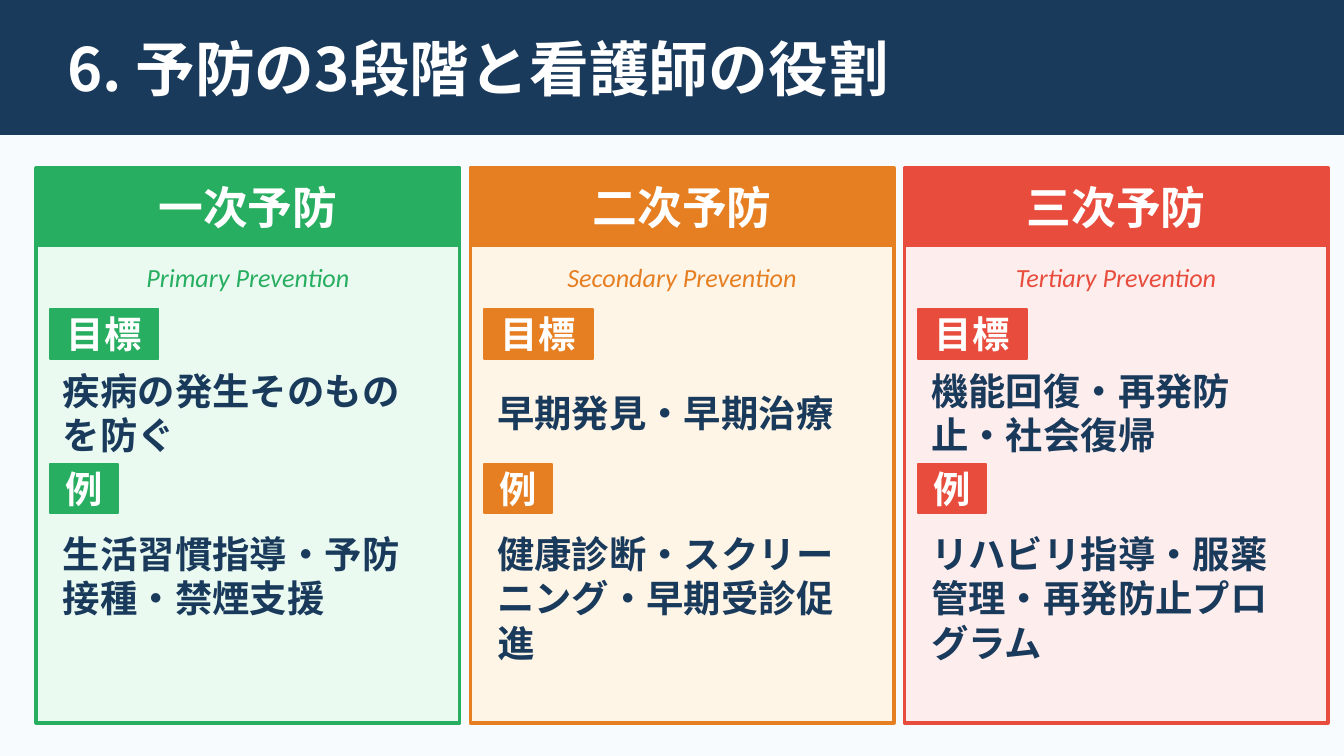
from pptx import Presentation
from pptx import util as u
from pptx.dml import color
from pptx.enum import shapes, text
from pptx.oxml import ns
from lxml import etree

PX = 4572
COLORS = {
    "background": "F8FBFD",
    "navy": "1A3A5C",
    "white": "FFFFFF",
    "green": "27AE60",
    "green_tint": "EAFAF1",
    "orange": "E67E22",
    "orange_tint": "FEF5E7",
    "red": "E74C3C",
    "red_tint": "FDEDEC",
}
STAGES = [
    ("一次予防", "Primary Prevention", "green",
     "疾病の発生そのものを防ぐ", "生活習慣指導・予防接種・禁煙支援"),
    ("二次予防", "Secondary Prevention", "orange",
     "早期発見・早期治療", "健康診断・スクリーニング・早期受診促進"),
    ("三次予防", "Tertiary Prevention", "red",
     "機能回復・再発防止・社会復帰", "リハビリ指導・服薬管理・再発防止プログラム"),
]
MARGIN, CARD_TOP, CARD_WIDTH, CARD_HEIGHT, GAP = 54, 250, 630, 826, 16
PADDING = 20
TEXT_WIDTH = CARD_WIDTH - 2 * PADDING - 2
LABEL_HEIGHT = 74


def rgb(name):
    return color.RGBColor.from_string(COLORS[name])


class SlideBuilder:
    japanese = "Noto Sans CJK JP"
    english = "Calibri"

    def __init__(self, slide):
        self.slide = slide
        fill = slide.background.fill
        fill.solid()
        fill.fore_color.rgb = rgb("background")

    def add_text(self, frame, words, size, ink, align, font=None, bold=True, italic=False,
                 anchor=text.MSO_ANCHOR.MIDDLE):
        frame.word_wrap = True
        frame.auto_size = text.MSO_AUTO_SIZE.NONE
        frame.vertical_anchor = anchor
        paragraph = frame.paragraphs[0]
        paragraph.alignment = align
        run = paragraph.add_run()
        run.text = words
        run.font.size = u.Pt(size)
        run.font.bold = bold
        run.font.italic = italic
        run.font.color.rgb = rgb(ink)
        run.font.name = font or self.japanese
        east_asian = etree.SubElement(run.font._element, ns.qn("a:ea"))
        east_asian.set("typeface", run.font.name)

    def box(self, left, top, width, height, fill, line, weight=1):
        shape = self.slide.shapes.add_shape(
            shapes.MSO_SHAPE.RECTANGLE, left * PX, top * PX, width * PX, height * PX)
        shape.shadow.inherit = False
        shape.fill.solid()
        shape.fill.fore_color.rgb = rgb(fill)
        shape.line.color.rgb = rgb(line)
        shape.line.width = u.Pt(weight)
        return shape

    def label(self, left, top, width, height, words, size, fill):
        frame = self.box(left, top, width, height, fill, fill).text_frame
        frame.margin_left = frame.margin_right = 0
        frame.margin_top = frame.margin_bottom = 0
        self.add_text(frame, words, size, "white", text.PP_ALIGN.CENTER)

    def text_box(self, left, top, width, height, words, size, ink,
                 align=text.PP_ALIGN.LEFT, **style):
        shape = self.slide.shapes.add_textbox(left * PX, top * PX, width * PX, height * PX)
        self.add_text(shape.text_frame, words, size, ink, align, **style)

    def title(self, left, top, width, height, words):
        shape = self.slide.shapes.title
        shape.left, shape.top = left * PX, top * PX
        shape.width, shape.height = width * PX, height * PX
        self.add_text(shape.text_frame, words, 32, "white", text.PP_ALIGN.LEFT)
        shape.element.getparent().append(shape.element)

    def card(self, left, name, english_name, accent, goal, example):
        inner = left + PADDING
        self.box(left, CARD_TOP, CARD_WIDTH, CARD_HEIGHT, accent + "_tint", accent, 2)
        self.label(left, CARD_TOP, CARD_WIDTH, 116, name, 24, accent)
        self.text_box(left, 370, CARD_WIDTH, 84, english_name, 14, accent,
                      text.PP_ALIGN.CENTER, font=self.english, bold=False, italic=True)
        self.label(inner, 460, 162, LABEL_HEIGHT, "目標", 20, accent)
        self.text_box(inner, 540, TEXT_WIDTH, 148, goal, 20, "navy")
        self.label(inner, 690, 102, LABEL_HEIGHT, "例", 20, accent)
        self.text_box(inner, 780, TEXT_WIDTH, 232, example, 20, "navy",
                      anchor=text.MSO_ANCHOR.TOP)


def main():
    presentation = Presentation()
    presentation.slide_width = 2000 * PX
    presentation.slide_height = 1125 * PX
    builder = SlideBuilder(presentation.slides.add_slide(presentation.slide_layouts[5]))
    builder.box(0, 0, 2000, 200, "navy", "navy")
    builder.title(80, 30, 1840, 140, "6. 予防の3段階と看護師の役割")
    for index, stage in enumerate(STAGES):
        builder.card(MARGIN + index * (CARD_WIDTH + GAP), *stage)
    presentation.save("out.pptx")


if __name__ == "__main__":
    main()
